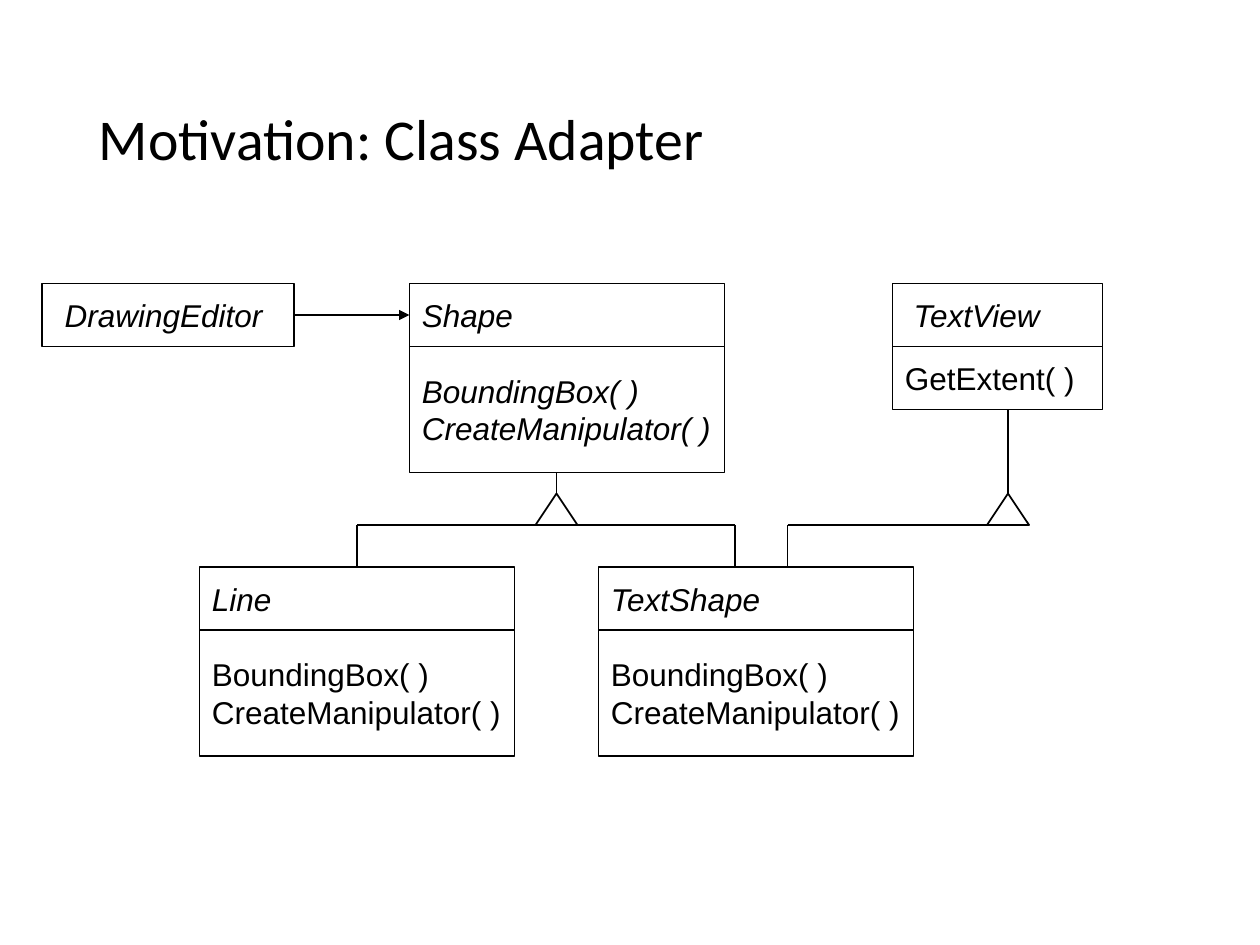
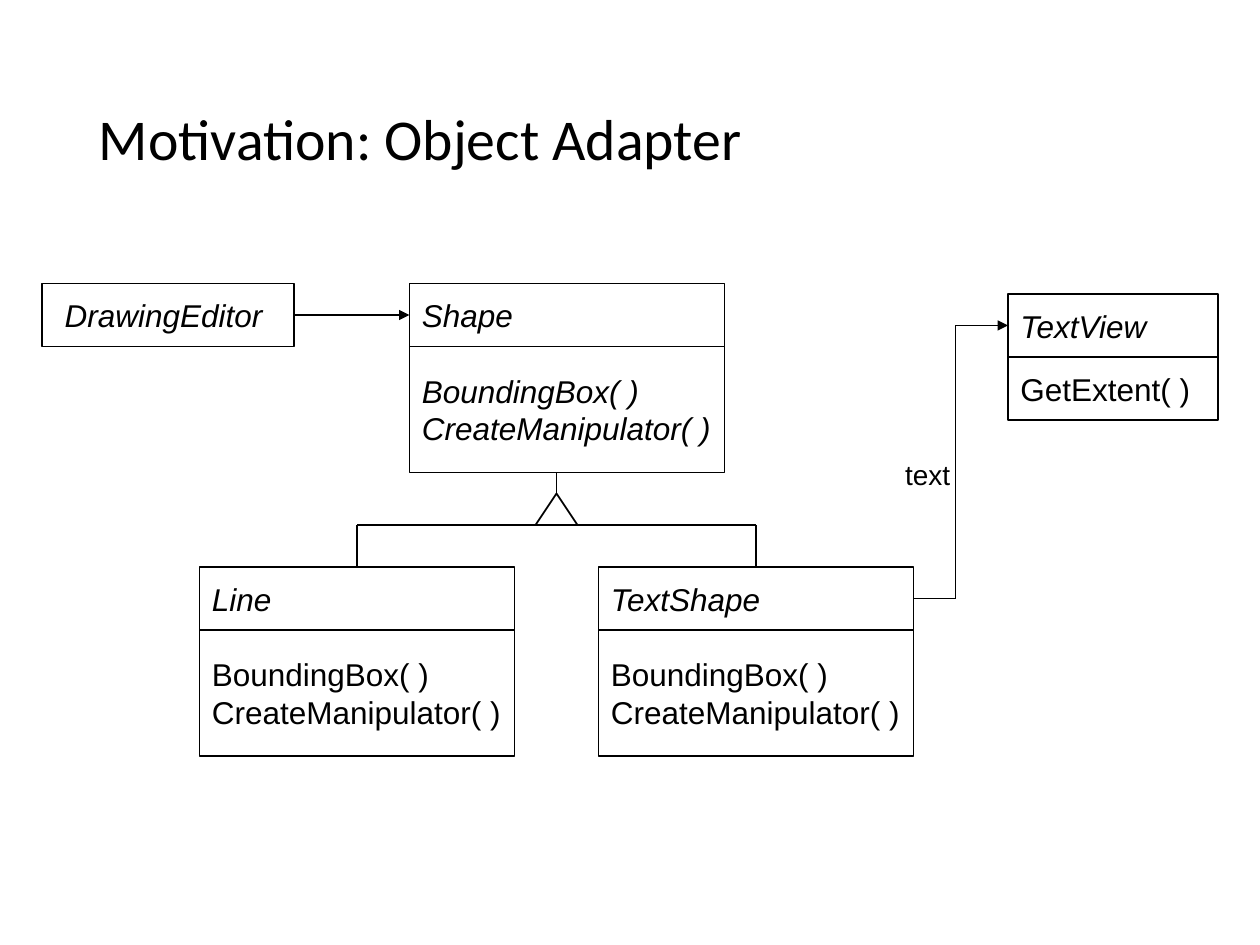
from lxml.etree import SubElement
from pptx import Presentation
from pptx.dml.color import RGBColor
from pptx.enum.shapes import MSO_CONNECTOR, MSO_SHAPE
from pptx.enum.text import MSO_ANCHOR, MSO_AUTO_SIZE, PP_ALIGN
from pptx.oxml.ns import qn
from pptx.util import Pt

BLACK = RGBColor(0x00, 0x00, 0x00)
WHITE = RGBColor(0xFF, 0xFF, 0xFF)
TITLE_FONT = "Calibri"
DIAGRAM_FONT = "Arial"

TOP, LEFT, RIGHT = 0, 1, 3  # connection sites of a rectangle
HEADER_HEIGHT = 36
CLASS_WIDTH = 180
VIEW_WIDTH = 120
BRANCH_Y = 300  # level of the inheritance lines
CHILD_TOP = 324
SHAPE_STEM_X = 318
LINE_STEM_X = 204
VIEW_STEM_X = 576
OPERATIONS = ["BoundingBox( )", "CreateManipulator( )"]


def add_class(slide, left, top, width, name, operations=(), body_height=72,
              italic_body=False, alignment=PP_ALIGN.LEFT):
    """Draw a class as a header over an optional body; return the header."""
    parts = [(top, HEADER_HEIGHT, [name], True)]
    if operations:
        parts.append((top + HEADER_HEIGHT, body_height, operations, italic_body))
    boxes = []
    for part_top, height, lines, italic in parts:
        box = slide.shapes.add_shape(MSO_SHAPE.RECTANGLE, Pt(left), Pt(part_top),
                                     Pt(width), Pt(height))
        box.shadow.inherit = False
        box.fill.solid()
        box.fill.fore_color.rgb = WHITE
        box.line.color.rgb = BLACK
        box.line.width = Pt(1)
        text_frame = box.text_frame
        text_frame.word_wrap = False
        text_frame.vertical_anchor = MSO_ANCHOR.MIDDLE
        text_frame.text = "\n".join(lines)
        for paragraph in text_frame.paragraphs:
            paragraph.alignment = alignment
            font = paragraph.runs[0].font
            font.name = DIAGRAM_FONT
            font.size = Pt(18)
            font.italic = italic
            font.color.rgb = BLACK
        boxes.append(box)
    return boxes[0]


def add_line(slide, start, end, start_joint=None, end_joint=None, arrow=False):
    """Draw a line between two points; a joint is a (shape, site) pair."""
    connector = slide.shapes.add_connector(
        MSO_CONNECTOR.STRAIGHT, *(Pt(value) for value in (*start, *end)))
    if start_joint:
        connector.begin_connect(*start_joint)
    if end_joint:
        connector.end_connect(*end_joint)
    connector.line.color.rgb = BLACK
    connector.line.width = Pt(1)
    properties = connector._element.spPr
    if arrow:
        SubElement(properties.find(qn("a:ln")), qn("a:tailEnd"), type="triangle")
    SubElement(properties, qn("a:effectLst"))


presentation = Presentation()
presentation.slide_width = Pt(720)
presentation.slide_height = Pt(540)

# The parts that both slides share
slides = []
text_shapes = []
for title, text_shape_stem_x in [("Motivation: Class Adapter", 420),
                                 ("Motivation: Object Adapter", 432)]:
    slide = presentation.slides.add_slide(presentation.slide_layouts[6])
    title_box = slide.shapes.add_textbox(Pt(49.5), Pt(28.75), Pt(621), Pt(104.4))
    text_frame = title_box.text_frame
    text_frame.word_wrap = True
    text_frame.vertical_anchor = MSO_ANCHOR.MIDDLE
    text_frame.text = title
    paragraph = text_frame.paragraphs[0]
    paragraph.line_spacing = 0.9
    font = paragraph.runs[0].font
    font.name = TITLE_FONT
    font.size = Pt(33)
    font.color.rgb = BLACK

    editor = add_class(slide, 24, 162, 144, "DrawingEditor ",
                       alignment=PP_ALIGN.CENTER)
    shape_class = add_class(slide, 234, 162, CLASS_WIDTH, "Shape", OPERATIONS,
                            italic_body=True)
    line_class = add_class(slide, 114, CHILD_TOP, CLASS_WIDTH, "Line", OPERATIONS)
    text_shape = add_class(slide, 342, CHILD_TOP, CLASS_WIDTH, "TextShape", OPERATIONS)

    add_line(slide, (168, 180), (234, 180), (editor, RIGHT), (shape_class, LEFT),
             arrow=True)
    add_line(slide, (SHAPE_STEM_X, 270), (SHAPE_STEM_X, BRANCH_Y))
    text_shape_joint = (text_shape, TOP) if text_shape_stem_x == 432 else None
    for stem_x, joint in [(LINE_STEM_X, (line_class, TOP)),
                          (text_shape_stem_x, text_shape_joint)]:
        add_line(slide, (SHAPE_STEM_X, BRANCH_Y), (stem_x, BRANCH_Y))
        add_line(slide, (stem_x, BRANCH_Y), (stem_x, CHILD_TOP), end_joint=joint)
    slides.append(slide)
    text_shapes.append(text_shape)

class_slide, object_slide = slides

# Class adapter: TextShape also inherits from TextView
add_class(class_slide, 510, 162, VIEW_WIDTH, " TextView", ["GetExtent( )"], HEADER_HEIGHT)
view_route = [(450, CHILD_TOP), (450, BRANCH_Y), (VIEW_STEM_X, BRANCH_Y),
              (VIEW_STEM_X, 234)]
for start, end in zip(view_route, view_route[1:]):
    add_line(class_slide, start, end)

# Object adapter: TextShape refers to a TextView
text_view = add_class(object_slide, 576, 168, VIEW_WIDTH, "TextView", ["GetExtent( )"],
                      HEADER_HEIGHT)
add_line(object_slide, (522, 342), (546, 342), start_joint=(text_shapes[1], RIGHT))
add_line(object_slide, (546, 342), (546, 186))
add_line(object_slide, (546, 186), (576, 186), end_joint=(text_view, LEFT), arrow=True)

reference_label = object_slide.shapes.add_textbox(Pt(510), Pt(258), Pt(40.3), Pt(26.6))
text_frame = reference_label.text_frame
text_frame.word_wrap = False
text_frame.auto_size = MSO_AUTO_SIZE.SHAPE_TO_FIT_TEXT
text_frame.vertical_anchor = MSO_ANCHOR.MIDDLE
text_frame.text = "text"
paragraph = text_frame.paragraphs[0]
paragraph.alignment = PP_ALIGN.CENTER
font = paragraph.runs[0].font
font.name = DIAGRAM_FONT
font.size = Pt(16)
font.color.rgb = BLACK

# Inheritance triangles cover the stems
for slide, stem_x in [(class_slide, SHAPE_STEM_X), (class_slide, VIEW_STEM_X),
                      (object_slide, SHAPE_STEM_X)]:
    triangle = slide.shapes.add_shape(MSO_SHAPE.ISOSCELES_TRIANGLE, Pt(stem_x - 12),
                                      Pt(BRANCH_Y - 18), Pt(24), Pt(18))
    triangle.shadow.inherit = False
    triangle.fill.solid()
    triangle.fill.fore_color.rgb = WHITE
    triangle.line.color.rgb = BLACK
    triangle.line.width = Pt(1)

presentation.save("out.pptx")
